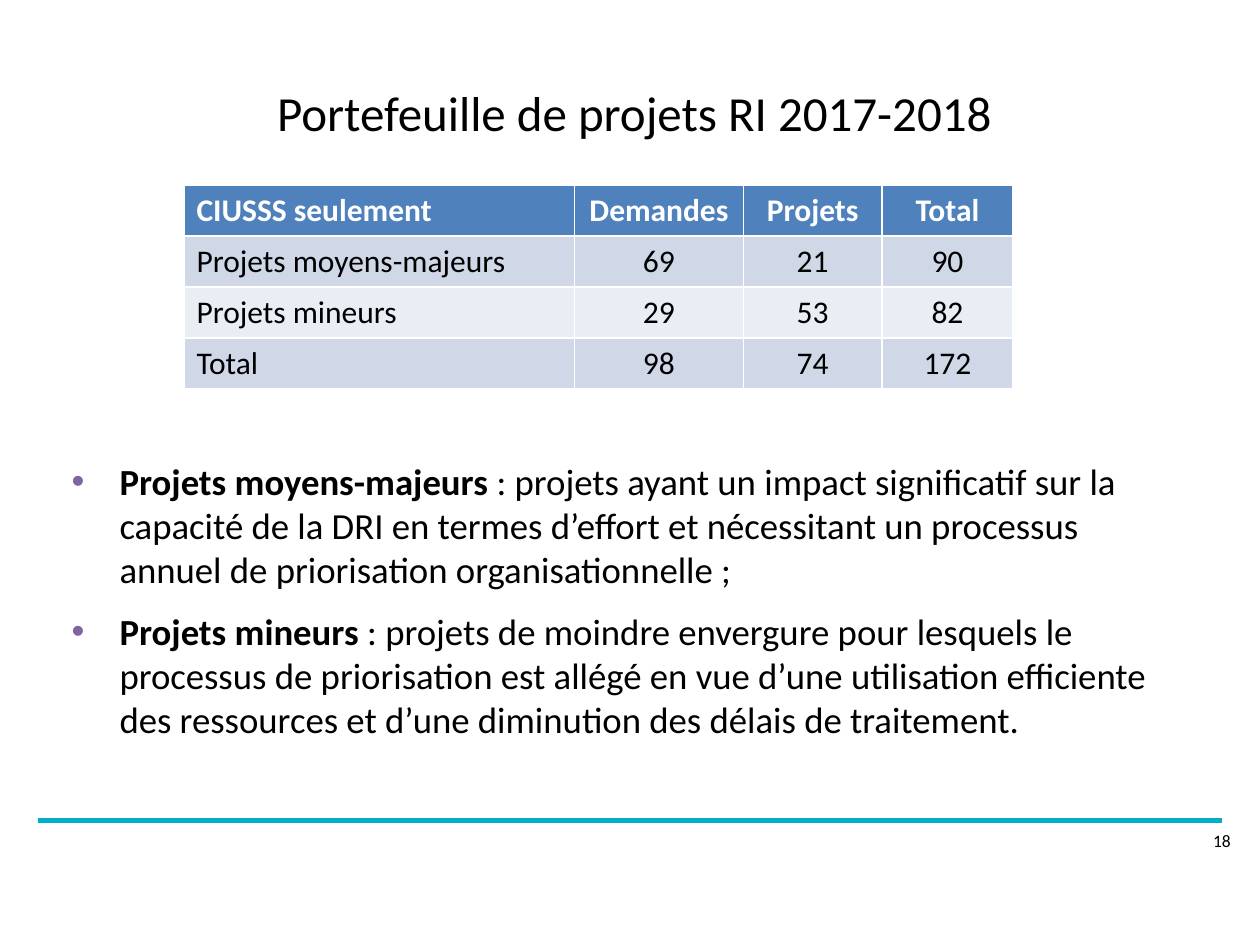
from dataclasses import dataclass

from lxml import etree
from pptx import Presentation
from pptx.dml.color import RGBColor
from pptx.enum.shapes import MSO_CONNECTOR
from pptx.enum.text import MSO_ANCHOR, PP_ALIGN
from pptx.oxml.ns import qn
from pptx.util import Inches, Pt

LEFT, CENTER = PP_ALIGN.LEFT, PP_ALIGN.CENTER
MIDDLE = MSO_ANCHOR.MIDDLE
STRAIGHT = MSO_CONNECTOR.STRAIGHT

BLACK = RGBColor(0x00, 0x00, 0x00)
WHITE = RGBColor(0xFF, 0xFF, 0xFF)
TEAL = RGBColor(0x00, 0xAE, 0xC7)
PURPLE = RGBColor(0x80, 0x64, 0xA2)
HEADER_BLUE = RGBColor(0x4F, 0x81, 0xBD)
BAND_DARK = RGBColor(0xD0, 0xD8, 0xE8)
BAND_LIGHT = RGBColor(0xE9, 0xED, 0xF4)

FONT = "Calibri"
COLUMN_WIDTHS = (3.1, 1.34, 1.1, 1.04)
ROW_HEIGHT = 0.405
TABLE_ROWS = (
    ("CIUSSS seulement", "Demandes", "Projets", "Total"),
    ("Projets moyens-majeurs", "69", "21", "90"),
    ("Projets mineurs", "29", "53", "82"),
    ("Total", "98", "74", "172"),
)


@dataclass(frozen=True)
class Box:
    left: float
    top: float
    width: float
    height: float

    def lengths(self) -> tuple:
        return tuple(map(Inches, (self.left, self.top, self.width, self.height)))


@dataclass(frozen=True)
class Definition:
    term: str
    meaning: str


DEFINITIONS = (
    Definition(
        "Projets moyens-majeurs ",
        ": projets ayant un impact significatif sur la capacité de la DRI en termes "
        "d’effort et nécessitant un processus annuel de priorisation organisationnelle ;",
    ),
    Definition(
        "Projets mineurs ",
        ": projets de moindre envergure pour lesquels le processus de priorisation est "
        "allégé en vue d’une utilisation efficiente des ressources et d’une diminution "
        "des délais de traitement.",
    ),
)


def set_font(font, size: float, color: RGBColor = BLACK, bold: bool = False) -> None:
    values = {"name": FONT, "size": Pt(size), "bold": bold}
    for name, value in values.items():
        setattr(font, name, value)
    font.color.rgb = color


def add_title(slide, box: Box, text: str) -> None:
    title = slide.shapes.title
    title.left, title.top, title.width, title.height = box.lengths()
    frame = title.text_frame
    frame.text = text
    frame.vertical_anchor = MIDDLE
    paragraph = frame.paragraphs[0]
    paragraph.alignment = CENTER
    set_font(paragraph.runs[0].font, 28)


def add_text_frame(slide, box: Box):
    frame = slide.shapes.add_textbox(*box.lengths()).text_frame
    frame.word_wrap = True
    return frame


def add_bullet(paragraph, color: RGBColor, indent: float) -> None:
    properties = paragraph._p.get_or_add_pPr()
    properties.set("marL", str(Inches(indent)))
    properties.set("indent", str(-Inches(indent)))
    bullet_color = etree.SubElement(properties, qn("a:buClr"))
    etree.SubElement(bullet_color, qn("a:srgbClr"), val=str(color))
    etree.SubElement(properties, qn("a:buFont"), typeface="Arial")
    etree.SubElement(properties, qn("a:buChar"), char="•")


def add_definitions(slide, box: Box) -> None:
    frame = add_text_frame(slide, box)
    for index, definition in enumerate(DEFINITIONS):
        paragraph = frame.add_paragraph() if index else frame.paragraphs[0]
        add_bullet(paragraph, PURPLE, 0.38)
        paragraph.space_before = Pt(4.2 if index else 0)
        paragraph.space_after = Pt(6)
        for text, bold in ((definition.term, True), (definition.meaning, False)):
            run = paragraph.add_run()
            run.text = text
            set_font(run.font, 21, bold=bold)


def add_project_table(slide, box: Box) -> None:
    # The default table style supplies the white cell borders
    frame = slide.shapes.add_table(len(TABLE_ROWS), len(COLUMN_WIDTHS), *box.lengths())
    table = frame.table
    for column, width in zip(table.columns, COLUMN_WIDTHS):
        column.width = Inches(width)
    for row_index, texts in enumerate(TABLE_ROWS):
        header = row_index == 0
        band = BAND_DARK if row_index % 2 else BAND_LIGHT
        table.rows[row_index].height = Inches(ROW_HEIGHT)
        for column_index, text in enumerate(texts):
            cell = table.cell(row_index, column_index)
            cell.fill.solid()
            cell.fill.fore_color.rgb = HEADER_BLUE if header else band
            cell.text = text
            paragraph = cell.text_frame.paragraphs[0]
            paragraph.alignment = CENTER if column_index else LEFT
            set_font(paragraph.runs[0].font, 18, WHITE if header else BLACK, header)


def add_footer(slide, number: str) -> None:
    rule = slide.shapes.add_connector(
        STRAIGHT, Inches(0.3), Inches(6.51), Inches(9.7), Inches(6.51)
    )
    rule.line.color.rgb = TEAL
    rule.line.width = Pt(3)
    etree.SubElement(rule._element.spPr, qn("a:effectLst"))

    frame = add_text_frame(slide, Box(9.53, 6.54, 0.47, 0.4))
    run = frame.paragraphs[0].add_run()
    run.text = number
    set_font(run.font, 10)


def main() -> None:
    presentation = Presentation()
    presentation.slide_width = Inches(10)
    presentation.slide_height = Inches(7.5)
    title_only = presentation.slide_layouts.get_by_name("Title Only")
    slide = presentation.slides.add_slide(title_only)

    # Footer rule and page number
    add_footer(slide, "18")
    # Title, definitions and project counts
    add_title(slide, Box(0.66, 0.3, 8.75, 1.17), "Portefeuille de projets RI 2017-2018")
    add_definitions(slide, Box(0.47, 3.59, 8.91, 2.46))
    table_height = ROW_HEIGHT * len(TABLE_ROWS)
    add_project_table(slide, Box(1.46, 1.47, sum(COLUMN_WIDTHS), table_height))

    presentation.save("out.pptx")


if __name__ == "__main__":
    main()
